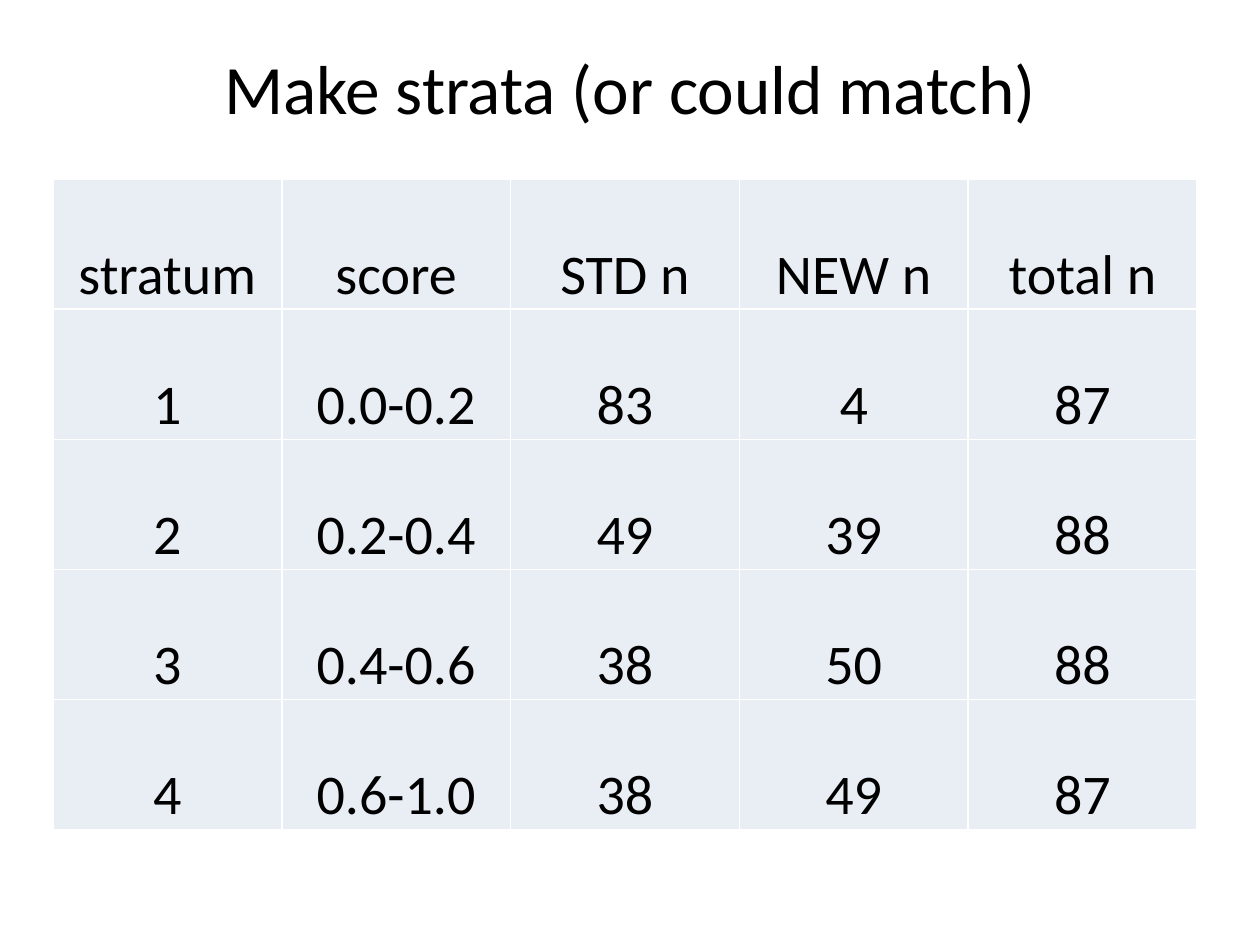
from lxml import etree
from pptx import Presentation
from pptx.dml.color import RGBColor
from pptx.enum.text import MSO_ANCHOR, PP_ALIGN
from pptx.oxml.ns import qn
from pptx.util import Pt

MIDDLE, BOTTOM = MSO_ANCHOR.MIDDLE, MSO_ANCHOR.BOTTOM
CENTER = PP_ALIGN.CENTER
BLACK = RGBColor(0x00, 0x00, 0x00)
WHITE = RGBColor(0xFF, 0xFF, 0xFF)
PALE_BLUE = RGBColor(0xE9, 0xED, 0xF4)
FONT = "Calibri"
TITLE_ONLY = 5
PX_PER_INCH = 126

STRATA = [
    ["stratum", "score", "STD n", "NEW n", "total n"],
    ["1", "0.0-0.2", "83", "4", "87"],
    ["2", "0.2-0.4", "49", "39", "88"],
    ["3", "0.4-0.6", "38", "50", "88"],
    ["4", "0.6-1.0", "38", "49", "87"],
]


def px(length):
    return round(length * 914400 / PX_PER_INCH)


def write(text_frame, text, size):
    text_frame.text = text
    paragraph = text_frame.paragraphs[0]
    paragraph.alignment = CENTER
    font = paragraph.runs[0].font
    font.name, font.size = FONT, Pt(size)
    font.color.rgb = BLACK


def add_borders(cell, color, width):
    properties = cell._tc.get_or_add_tcPr()
    for side in ("a:lnL", "a:lnR", "a:lnT", "a:lnB"):
        border = etree.SubElement(properties, qn(side), w=str(Pt(width)))
        fill = etree.SubElement(border, qn("a:solidFill"))
        etree.SubElement(fill, qn("a:srgbClr"), val=str(color))


def place_title(slide, left, top, width, height):
    title = slide.shapes.title
    title.left, title.top = px(left), px(top)
    title.width, title.height = px(width), px(height)
    title.text_frame.vertical_anchor = MIDDLE
    write(title.text_frame, "Make strata (or could match)", 39.6)


def format_cell(cell, text):
    cell.margin_left = cell.margin_right = cell.margin_top = px(1)
    cell.margin_bottom = 0
    cell.vertical_anchor = BOTTOM
    add_borders(cell, WHITE, 1)
    cell.fill.solid()
    cell.fill.fore_color.rgb = PALE_BLUE
    write(cell.text_frame, text, 32)


def place_strata(slide, left, top, width, height):
    table = slide.shapes.add_table(
        len(STRATA), len(STRATA[0]), px(left), px(top), px(width), px(height)
    ).table
    table.first_row = table.horz_banding = False
    for row, values in enumerate(STRATA):
        for column, value in enumerate(values):
            format_cell(table.cell(row, column), value)


def main():
    deck = Presentation()
    deck.slide_width, deck.slide_height = px(1260), px(945)
    slide = deck.slides.add_slide(deck.slide_layouts[TITLE_ONLY])
    place_title(slide, 63, 38, 1134, 98)
    place_strata(slide, 53, 179, 1144, 651)
    deck.save("out.pptx")


if __name__ == "__main__":
    main()
